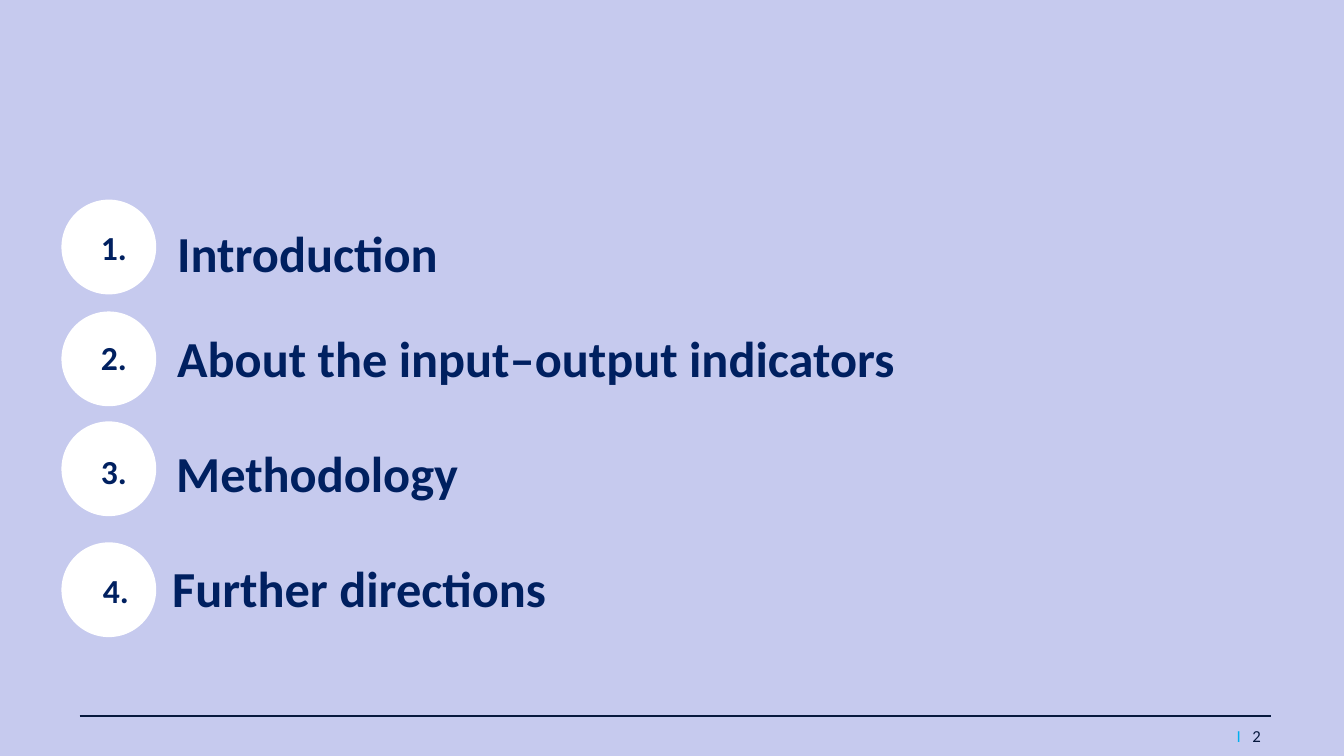
import pptx
import pptx.util
import pptx.dml.color
import pptx.enum.shapes
import pptx.enum.text
from lxml import etree

Pt = pptx.util.Pt
RGBColor = pptx.dml.color.RGBColor
Align = pptx.enum.text.PP_ALIGN
Anchor = pptx.enum.text.MSO_ANCHOR

LAVENDER = RGBColor(0xC6, 0xCA, 0xEE)
WHITE = RGBColor(0xFF, 0xFF, 0xFF)
NAVY = RGBColor(0x00, 0x20, 0x60)
INK = RGBColor(0x06, 0x18, 0x3D)
SKY = RGBColor(0x00, 0xB0, 0xF0)

PAGE_WIDTH, PAGE_HEIGHT = 960, 540
CIRCLE_SIZE = 67.7
AGENDA_LEFT = 43.9

# circle top, number shift right and down, label left and shift down, line spacing
AGENDA = [
    ("Introduction", 142.6, 0, 15.8, 119.5, 3.6, 1.2),
    ("About the input–output indicators", 222.5, 0, 14.4, 119.5, 7.9, 1),
    ("Methodology", 301, 0, 17.3, 118.8, 11.5, 1),
    ("Further directions", 387.4, 1.5, 15.8, 115.9, 7.2, 1),
]


def add_span(para, text, size, color, bold=False):
    span = para.add_run()
    span.text = text
    span.font.name = "Calibri"
    span.font.size = Pt(size)
    span.font.bold = bold
    span.font.color.rgb = color


def add_text_box(page, left, top, width, height):
    box = page.shapes.add_textbox(Pt(left), Pt(top), Pt(width), Pt(height))
    box.text_frame.word_wrap = True
    return box.text_frame


def add_agenda_item(page, left, top, number, label, number_right, number_down,
                    label_left, label_down, line_spacing):
    circle = page.shapes.add_shape(pptx.enum.shapes.MSO_SHAPE.OVAL, Pt(left), Pt(top),
                                   Pt(CIRCLE_SIZE), Pt(CIRCLE_SIZE))
    circle.shadow.inherit = False
    circle.fill.solid()
    circle.fill.fore_color.rgb = WHITE
    circle.line.fill.background()

    frame = add_text_box(page, left + number_right, top + number_down, 74.9, 36)
    para = frame.paragraphs[0]
    para.alignment = Align.CENTER
    add_span(para, f"{number}.", 24, NAVY, True)

    frame = add_text_box(page, label_left, top + label_down, 836.6, 51)
    para = frame.paragraphs[0]
    para.line_spacing = line_spacing
    add_span(para, label, 36, NAVY, True)


def add_footer(page, left, top, width, number):
    right = left + width
    rule = page.shapes.add_connector(pptx.enum.shapes.MSO_CONNECTOR.STRAIGHT,
                                     Pt(left), Pt(top), Pt(right), Pt(top))
    rule.line.color.rgb = INK
    rule.line.width = Pt(1.5)
    etree.SubElement(rule.element.spPr, pptx.oxml.ns.qn("a:effectLst"))

    frame = add_text_box(page, right - 24.5, top, 24.5, 28.8)
    frame.margin_left = frame.margin_right = 0
    frame.vertical_anchor = Anchor.MIDDLE
    para = frame.paragraphs[0]
    tabs = etree.SubElement(para._p.get_or_add_pPr(), pptx.oxml.ns.qn("a:tabLst"))
    etree.SubElement(tabs, pptx.oxml.ns.qn("a:tab"), pos=str(Pt(11.2)), algn="l")
    add_span(para, "I\t", 12, SKY)
    add_span(para, number, 12, INK)


def build_agenda_page(deck):
    page = deck.slides.add_slide(deck.slide_layouts[6])
    page.background.fill.solid()
    page.background.fill.fore_color.rgb = LAVENDER
    for number, (label, top, *offsets) in enumerate(AGENDA, 1):
        add_agenda_item(page, AGENDA_LEFT, top, number, label, *offsets)
    add_footer(page, 56.9, 511.5, 851, "2")


def main():
    deck = pptx.Presentation()
    deck.slide_width = Pt(PAGE_WIDTH)
    deck.slide_height = Pt(PAGE_HEIGHT)
    build_agenda_page(deck)
    deck.save("out.pptx")


if __name__ == "__main__":
    main()
